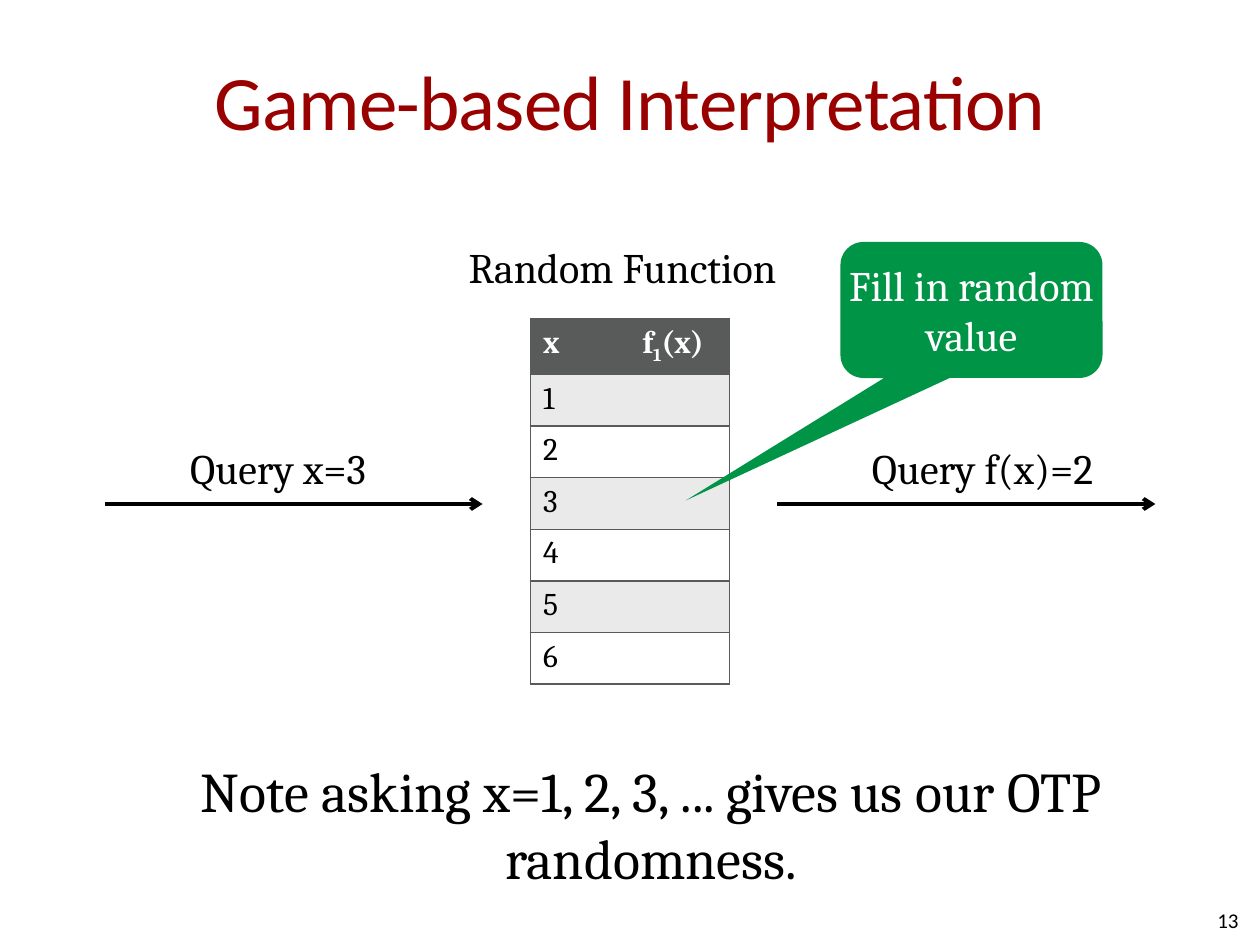
from dataclasses import dataclass

from lxml import etree
from pptx import Presentation
from pptx.dml.color import RGBColor
from pptx.enum.shapes import MSO_CONNECTOR, MSO_SHAPE
from pptx.enum.text import MSO_ANCHOR, MSO_AUTO_SIZE, PP_ALIGN
from pptx.oxml.ns import qn
from pptx.util import Pt

EMU_PER_PX = 9144  # 100 px to the inch
STRAIGHT = MSO_CONNECTOR.STRAIGHT
CALLOUT = MSO_SHAPE.ROUNDED_RECTANGULAR_CALLOUT
LEFT, CENTER, RIGHT = PP_ALIGN.LEFT, PP_ALIGN.CENTER, PP_ALIGN.RIGHT
TOP, MIDDLE = MSO_ANCHOR.TOP, MSO_ANCHOR.MIDDLE
GROW = MSO_AUTO_SIZE.SHAPE_TO_FIT_TEXT


@dataclass(frozen=True)
class Theme:
    heading_font: str = "Calibri"
    body_font: str = "Cambria"
    title_color: str = "990000"
    ink: str = "000000"
    paper: str = "FFFFFF"
    band: str = "EAEAEA"
    header: str = "595A5A"
    callout: str = "009446"
    title_size: int = 44
    note_size: int = 32
    label_size: int = 24
    table_size: int = 18
    number_size: int = 12


THEME = Theme()


def px(*lengths):
    return [length * EMU_PER_PX for length in lengths]


def add_run(paragraph, text, size, color=THEME.ink, font=THEME.body_font, bold=False):
    run = paragraph.add_run()
    run.text = text
    run.font.size = Pt(size)
    run.font.name = font
    run.font.bold = bold
    run.font.color.rgb = RGBColor.from_string(color)
    return run


def prepare_frame(frame, align=LEFT, anchor=TOP, wrap=True, inset_y=0):
    """Set the frame's layout and return its first paragraph."""
    frame.word_wrap = wrap
    frame.vertical_anchor = anchor
    frame.margin_left = frame.margin_right = 0
    frame.margin_top = frame.margin_bottom = inset_y * EMU_PER_PX
    paragraph = frame.paragraphs[0]
    paragraph.alignment = align
    return paragraph


def set_title(slide, text):
    title = slide.shapes.title
    title.left, title.top, title.width, title.height = px(50, 17, 900, 125)
    paragraph = prepare_frame(title.text_frame, CENTER, MIDDLE, inset_y=5)
    run = add_run(paragraph, text, THEME.title_size, THEME.title_color, THEME.heading_font)
    run.font._element.set("spc", "-50")


def add_text(slide, box, text, size, font=THEME.body_font, grow=True, **layout):
    shape = slide.shapes.add_textbox(*px(*box))
    paragraph = prepare_frame(shape.text_frame, **layout)
    if grow:
        shape.text_frame.auto_size = GROW
    add_run(paragraph, text, size, font=font)


def add_arrow(slide, left, y, length):
    arrow = slide.shapes.add_connector(STRAIGHT, *px(left, y, left + length, y))
    arrow.line.color.rgb = RGBColor.from_string(THEME.ink)
    arrow.line.width = Pt(2.25)
    etree.SubElement(arrow.line._get_or_add_ln(), qn("a:tailEnd"), type="arrow")
    etree.SubElement(arrow._element.spPr, qn("a:effectLst"))


def add_callout(slide, box, text):
    callout = slide.shapes.add_shape(CALLOUT, *px(*box))
    callout.shadow.inherit = False
    for index, value in enumerate((-1.09, 1.4, 0.17)):
        callout.adjustments[index] = value
    callout.fill.solid()
    callout.fill.fore_color.rgb = RGBColor.from_string(THEME.callout)
    callout.line.fill.background()
    paragraph = prepare_frame(callout.text_frame, CENTER, MIDDLE)
    add_run(paragraph, text, THEME.label_size, THEME.paper)


def set_borders(cell, sides):
    """Draw the named sides (L, R, T, B) and clear the others."""
    properties = cell._tc.get_or_add_tcPr()
    for position, side in enumerate("LRTB"):
        line = etree.Element(qn(f"a:ln{side}"), w=str(Pt(1)))
        if side in sides:
            fill = etree.SubElement(line, qn("a:solidFill"))
            etree.SubElement(fill, qn("a:srgbClr"), val=THEME.header)
        else:
            etree.SubElement(line, qn("a:noFill"))
        properties.insert(position, line)


def add_function_table(slide, box, inputs):
    shape = slide.shapes.add_table(len(inputs) + 1, 2, *px(*box))
    table = shape.table
    for row_index, row in enumerate(table.rows):
        if row_index == 0:
            color = THEME.header
        else:
            color = THEME.band if row_index % 2 else THEME.paper
        for cell, sides in zip(row.cells, ("LTB", "RTB")):
            cell.fill.solid()
            cell.fill.fore_color.rgb = RGBColor.from_string(color)
            set_borders(cell, sides)

    header_style = {"size": THEME.table_size, "color": THEME.paper, "bold": True}
    add_run(table.cell(0, 0).text_frame.paragraphs[0], "x", **header_style)
    function_name = table.cell(0, 1).text_frame.paragraphs[0]
    add_run(function_name, "f", **header_style)
    subscript = add_run(function_name, "1", **header_style)
    subscript.font._element.set("baseline", "-25000")
    add_run(function_name, "(x)", **header_style)
    for row_index, value in enumerate(inputs, start=1):
        paragraph = table.cell(row_index, 0).text_frame.paragraphs[0]
        add_run(paragraph, str(value), THEME.table_size)


def main():
    presentation = Presentation()
    presentation.slide_width, presentation.slide_height = px(1000, 750)
    slide = presentation.slides.add_slide(presentation.slide_layouts[5])

    set_title(slide, "Game-based Interpretation")
    add_text(slide, (750, 710, 233, 40), "13", THEME.number_size,
             THEME.heading_font, grow=False, align=RIGHT, anchor=MIDDLE)
    add_function_table(slide, (421, 253, 158, 287), range(1, 7))

    labels = (
        ((372, 192, 256, 40), "Random Function"),
        ((151, 351, 149, 40), "Query x=3"),
        ((692, 351, 185, 40), "Query f(x)=2"),
    )
    for box, text in labels:
        add_text(slide, box, text, THEME.label_size, wrap=False)
    for left in (83, 617):
        add_arrow(slide, left, 400, 300)

    add_callout(slide, (667, 192, 208, 108), "Fill in random value")
    add_text(slide, (117, 600, 800, 108),
             "Note asking x=1, 2, 3, ... gives us our OTP randomness.",
             THEME.note_size, align=CENTER)
    presentation.save("out.pptx")


if __name__ == "__main__":
    main()
